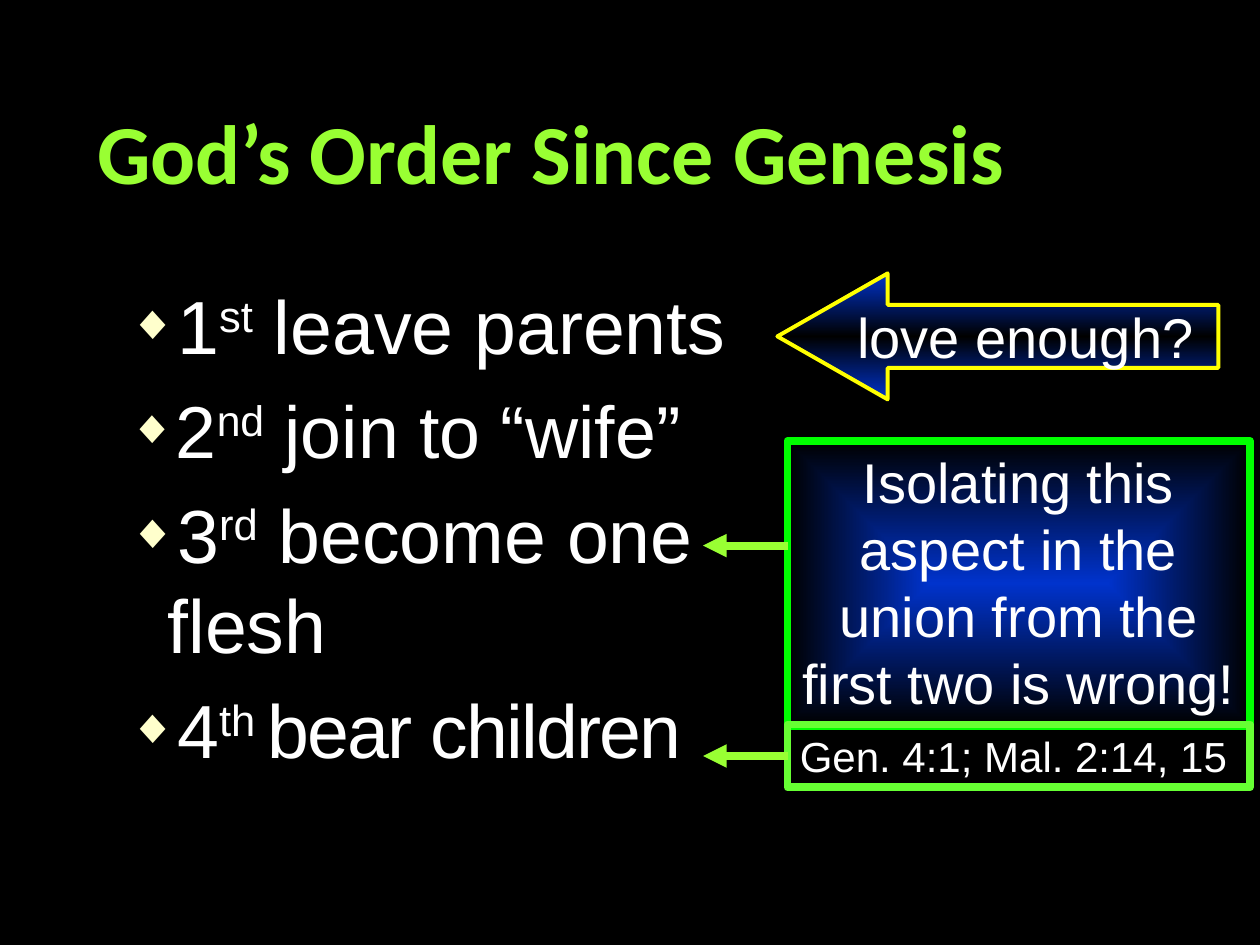
from lxml.etree import SubElement
from pptx import Presentation
from pptx.dml.color import RGBColor
from pptx.enum.shapes import MSO_CONNECTOR as Connector, MSO_SHAPE as Shape
from pptx.enum.text import MSO_ANCHOR as Anchor, MSO_AUTO_SIZE as AutoSize, PP_ALIGN as Align
from pptx.oxml import parse_xml
from pptx.oxml.ns import nsdecls, qn
from pptx.util import Inches, Pt

BLACK = RGBColor(0, 0, 0)
WHITE = RGBColor(255, 255, 255)
LIME = RGBColor(0x99, 0xFF, 0x33)
GREEN = RGBColor(0, 255, 0)
LIGHT_GREEN = RGBColor(0x66, 0xFF, 0x33)
YELLOW = RGBColor(255, 255, 0)
CREAM = RGBColor(0xFF, 0xFF, 0xCC)
BLUE = RGBColor(0, 0x33, 0xCC)

LINEAR = '<a:lin ang="5400000" scaled="1"/>'
FROM_CENTER = ('<a:path path="shape"><a:fillToRect l="50000" t="50000" '
               'r="50000" b="50000"/></a:path>')

STEPS = [
    (43, "1", "st", " leave parents", 0),
    (42, "2", "nd", " join to “wife”", 0),
    (43, "3", "rd", " become one flesh", 0),
    (43, "4", "th ", "bear children", -100),
]


def place(s, left, top, width, height):
    s.left, s.top = Inches(left), Inches(top)
    s.width, s.height = Inches(width), Inches(height)


def add_text(p, text, size=32, color=WHITE, font="Arial", bold=False, raised=False, spacing=0):
    r = p.add_run()
    r.text = text
    r.font.size = Pt(size)
    r.font.name = font
    r.font.bold = bold
    r.font.color.rgb = color
    if raised:
        r.font._element.set("baseline", "30000")
    if spacing:
        r.font._element.set("spc", str(spacing))


def set_bullet(p):
    pPr = p._p.get_or_add_pPr()
    pPr.set("marL", str(Inches(0.81)))
    pPr.set("indent", str(Inches(-0.31)))
    color = SubElement(pPr, qn("a:buClr"))
    SubElement(color, qn("a:srgbClr"), val=str(CREAM))
    SubElement(pPr, qn("a:buSzPct"), val="65000")
    SubElement(pPr, qn("a:buFont"), typeface="Arial")
    SubElement(pPr, qn("a:buChar"), char="◆")


def set_gradient(s, stops, direction):
    s.fill.background()
    marks = "".join(f'<a:gs pos="{pos * 1000}"><a:srgbClr val="{color}"/></a:gs>'
                    for pos, color in stops)
    grad = parse_xml(f'<a:gradFill {nsdecls("a")} rotWithShape="1">'
                     f'<a:gsLst>{marks}</a:gsLst>{direction}</a:gradFill>')
    spPr = s._element.spPr
    spPr.replace(spPr.find(qn("a:noFill")), grad)


def add_box(slide, kind, box, text, line, weight=4.5, size=32,
            align=Align.CENTER, anchor=Anchor.TOP, wrap=True):
    s = slide.shapes.add_shape(kind, *map(Inches, box))
    s.shadow.inherit = False
    s.fill.background()
    s.line.color.rgb = line
    s.line.width = Pt(weight)
    tf = s.text_frame
    tf.word_wrap = wrap
    tf.vertical_anchor = anchor
    p = tf.paragraphs[0]
    p.alignment = align
    add_text(p, text, size=size)
    return s


def add_arrow(slide, y):
    c = slide.shapes.add_connector(Connector.STRAIGHT, Inches(6.25), Inches(y),
                                   Inches(5.58), Inches(y))
    c.line.color.rgb = LIME
    c.line.width = Pt(4.5)
    SubElement(c.line._get_or_add_ln(), qn("a:tailEnd"), type="triangle")
    SubElement(c._element.spPr, qn("a:effectLst"))
    return c


def fill_title(s):
    place(s, 0.67, 0.67, 9.08, 1.25)
    tf = s.text_frame
    tf.auto_size = AutoSize.NONE
    tf.vertical_anchor = Anchor.MIDDLE
    p = tf.paragraphs[0]
    p.alignment = Align.LEFT
    p.line_spacing = 0.7
    add_text(p, "God’s Order Since Genesis", size=48, color=LIME, font="Calibri", bold=True)


def fill_steps(s):
    place(s, 0.42, 2.17, 5.75, 5.33)
    tf = s.text_frame
    tf.auto_size = AutoSize.NONE
    for i, (size, number, suffix, text, spacing) in enumerate(STEPS):
        p = tf.add_paragraph() if i else tf.paragraphs[0]
        p.level = 1
        set_bullet(p)
        p.space_before = Pt(8.5 if i else 0)
        add_text(p, number, size=size)
        add_text(p, suffix, size=size, raised=True)
        add_text(p, text, size=size, spacing=spacing)


def main():
    prs = Presentation()
    prs.slide_width, prs.slide_height = Inches(10), Inches(7.5)
    slide = prs.slides.add_slide(prs.slide_layouts[1])
    slide.background.fill.solid()
    slide.background.fill.fore_color.rgb = BLACK
    fill_title(slide.shapes.title)
    fill_steps(slide.placeholders[1])

    love = add_box(slide, Shape.LEFT_ARROW, (6.17, 2.17, 3.5, 1), "love enough?", YELLOW,
                   weight=2.25, anchor=Anchor.MIDDLE, wrap=False)
    love.adjustments[0], love.adjustments[1] = 0.5, 0.875
    set_gradient(love, [(0, BLUE), (50, BLACK), (100, BLUE)], LINEAR)

    warning = add_box(slide, Shape.RECTANGLE, (6.25, 3.5, 3.67, 2.26),
                      "Isolating this aspect in the union from the first two is wrong!", GREEN)
    set_gradient(warning, [(0, BLUE), (100, BLACK)], FROM_CENTER)
    add_arrow(slide, 4.33)

    verses = add_box(slide, Shape.RECTANGLE, (6.25, 5.75, 3.67, 0.5),
                     "Gen. 4:1; Mal. 2:14, 15", LIGHT_GREEN, size=24, align=Align.LEFT)
    add_arrow(slide, 6).begin_connect(verses, 1)

    prs.save("out.pptx")


if __name__ == "__main__":
    main()
